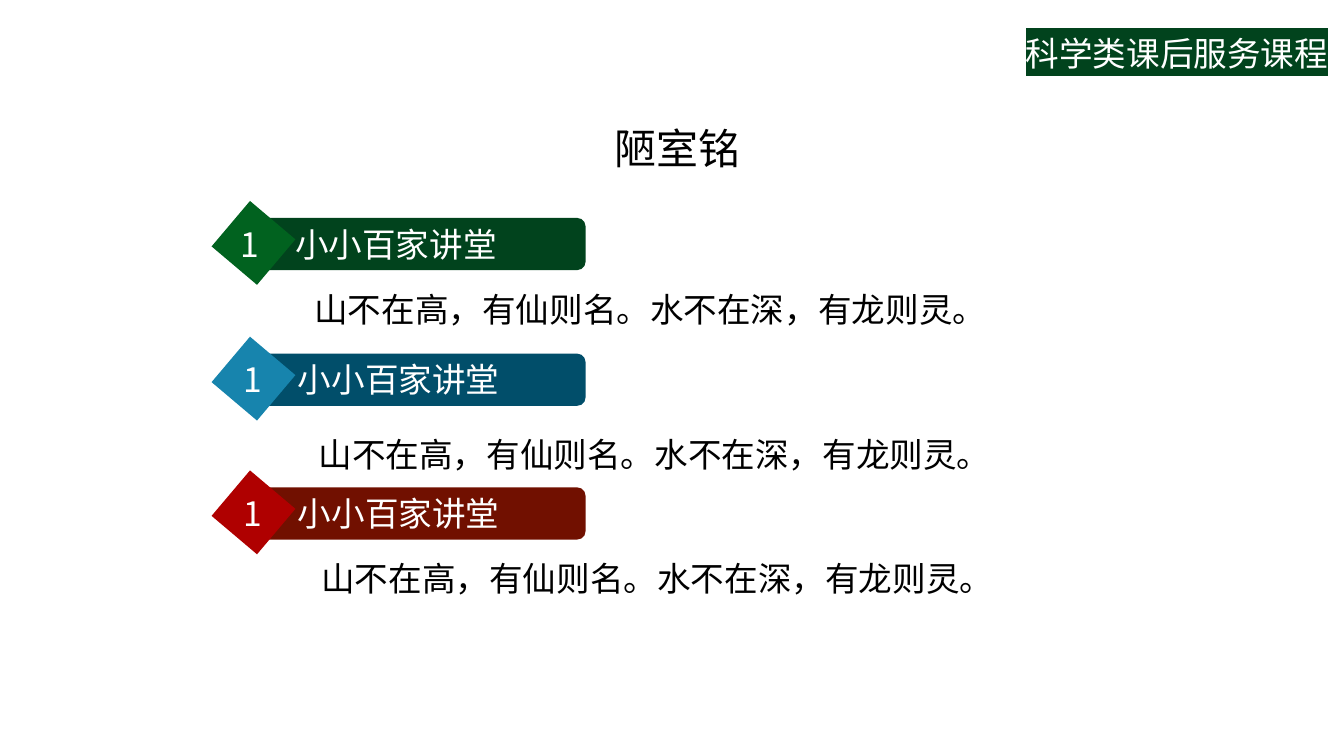
from pptx import Presentation
from pptx.dml.color import RGBColor
from pptx.enum.shapes import MSO_SHAPE
from pptx.enum.text import MSO_ANCHOR, MSO_AUTO_SIZE, PP_ALIGN
from pptx.oxml.ns import qn
from pptx.util import Cm, Pt
from lxml import etree

RECTANGLE = MSO_SHAPE.RECTANGLE
ROUNDED = MSO_SHAPE.ROUNDED_RECTANGLE
MIDDLE = MSO_ANCHOR.MIDDLE
CENTER = PP_ALIGN.CENTER
FIXED = MSO_AUTO_SIZE.NONE

FONT = "Noto Sans CJK SC"
TAG_FONT = "Noto Sans CJK JP"
GREEN = "01431D"
WHITE = "FFFFFF"
BLACK = "000000"
HEADING = "1\t小小百家讲堂"
VERSE = "山不在高，有仙则名。水不在深，有龙则灵。"

# bar top, heading left, verse top, verse width, verse indent, bar colour, diamond colour
SECTIONS = [
    (5.49, 5.82, 7.16, 18.11, 0.74, GREEN, "01621F"),
    (8.91, 5.89, 10.8, 18.64, 0.85, "014E6A", "1784AD"),
    (12.28, 5.89, 13.94, 18.64, 0.92, "711000", "AF0000"),
]


def colour(value):
    return RGBColor.from_string(value)


def write(frame, text, size=24, font=FONT, color=BLACK, highlight=None,
          indent=None, tab=None, align=None, spacing=None):
    frame.word_wrap = True
    para = frame.paragraphs[0]
    properties = para._p.get_or_add_pPr()
    if indent:
        properties.set("marL", str(Cm(indent)))
        properties.set("indent", "0")
    if tab:
        stops = etree.SubElement(properties, qn("a:tabLst"))
        etree.SubElement(stops, qn("a:tab"), pos=str(Cm(tab)), algn="l")
    if align is not None:
        para.alignment = align
    if spacing:
        para.line_spacing = spacing
    span = para.add_run()
    span.text = text
    span.font.size = Pt(size)
    span.font.color.rgb = colour(color)
    run_properties = span._r.get_or_add_rPr()
    if highlight:
        mark = etree.SubElement(run_properties, qn("a:highlight"))
        etree.SubElement(mark, qn("a:srgbClr"), val=highlight)
    for script in ("a:latin", "a:ea"):
        etree.SubElement(run_properties, qn(script), typeface=font)


def add_text(shapes, left, top, width, text, **style):
    box = shapes.add_textbox(Cm(left), Cm(top), Cm(width), Cm(1.28))
    write(box.text_frame, text, **style)


def add_block(shapes, kind, left, top, width, height, fill, rotation=0):
    block = shapes.add_shape(kind, Cm(left), Cm(top), Cm(width), Cm(height))
    block.shadow.inherit = False
    block.fill.solid()
    block.fill.fore_color.rgb = colour(fill)
    block.line.fill.background()
    block.rotation = rotation


def add_title(page, text):
    title = page.shapes.title
    title.left, title.top, title.width, title.height = (
        Cm(5.66), Cm(3), Cm(22.81), Cm(1.6))
    title.text_frame.auto_size = FIXED
    title.text_frame.vertical_anchor = MIDDLE
    write(title.text_frame, text, size=30, align=CENTER, spacing=0.9)


def add_section(page, top, heading_left, verse_top, verse_width, indent,
                bar_color, diamond_color):
    group = page.shapes.add_group_shape()
    add_block(group.shapes, ROUNDED, 6.17, top, 8.59, 1.32, bar_color)
    add_block(group.shapes, RECTANGLE, 5.64, top - 0.12, 1.5, 1.5,
              diamond_color, rotation=310.2)
    add_text(group.shapes, heading_left, top + 0.02, 13.11, HEADING,
             color=WHITE, tab=1.37)
    add_text(page.shapes, 6.93, verse_top, verse_width, VERSE, indent=indent)


def main():
    deck = Presentation()
    deck.slide_width = Cm(33.87)
    deck.slide_height = Cm(19.05)
    page = deck.slides.add_slide(deck.slide_layouts[5])
    add_text(page.shapes, 25.6, 0.71, 8.27, "科学类课后服务课程",
             font=TAG_FONT, color=WHITE, highlight=GREEN)
    add_title(page, "陋室铭")
    for section in SECTIONS:
        add_section(page, *section)
    deck.save("out.pptx")


if __name__ == "__main__":
    main()
